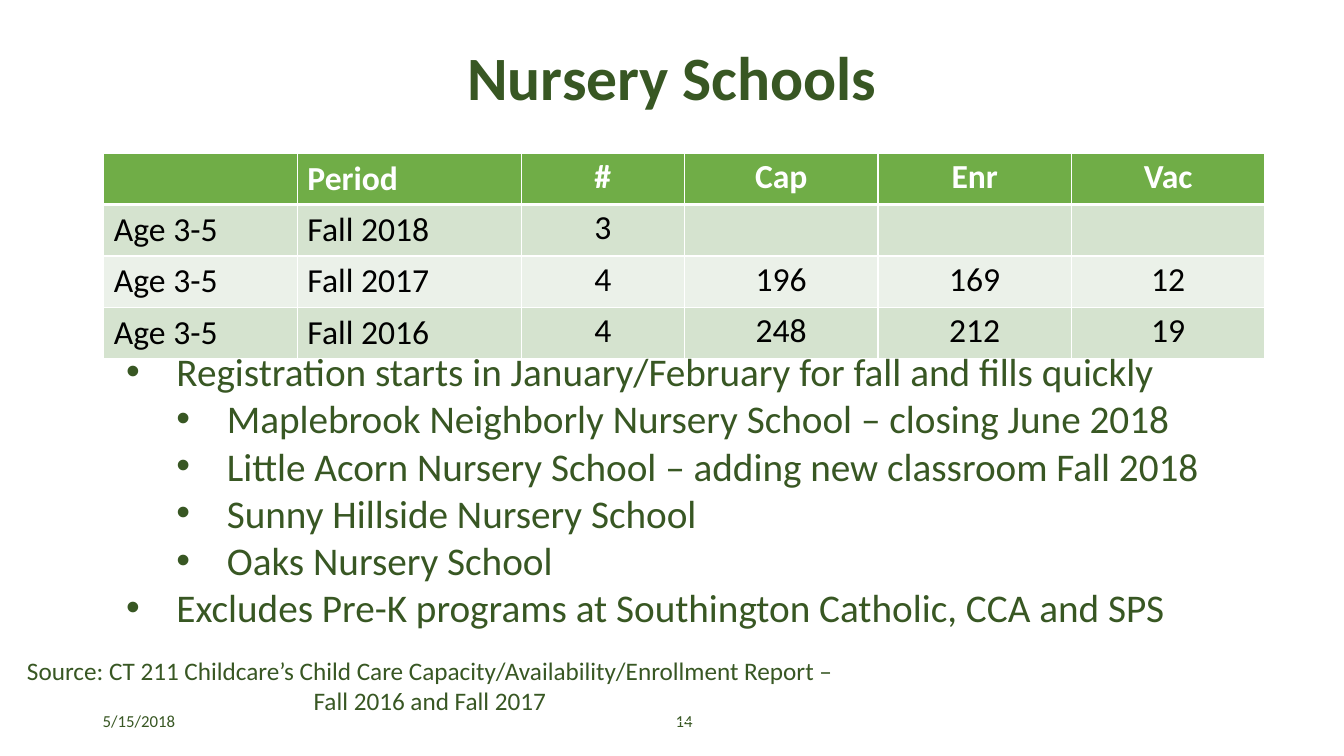
from dataclasses import dataclass

from lxml.etree import SubElement
from pptx import Presentation
from pptx.dml.color import RGBColor
from pptx.enum.text import MSO_ANCHOR, MSO_AUTO_SIZE, PP_ALIGN
from pptx.oxml.ns import qn
from pptx.util import Inches, Pt

SLIDE_WIDTH, SLIDE_HEIGHT = Inches(13.33), Inches(7.5)


@dataclass(frozen=True)
class Theme:
    font: str = "Calibri"
    green: str = "385723"
    header: str = "70AD47"
    bands: tuple = ("D5E3CF", "EBF1E9")
    white: str = "FFFFFF"
    black: str = "000000"
    title_size: int = 44
    list_size: int = 28
    table_size: int = 24
    source_size: int = 18
    footer_size: int = 12


THEME = Theme()

ENROLLMENT = [
    ("", "Period", "#", "Cap", "Enr", "Vac"),
    ("Age 3-5", "Fall 2018", "3", "", "", ""),
    ("Age 3-5", "Fall 2017", "4", "196", "169", "12"),
    ("Age 3-5", "Fall 2016", "4", "248", "212", "19"),
]
COLUMN_SHARES = (14.4, 16.65, 12.15, 14.4, 14.4, 14.4)
ROW_SHARE = 6.8

NOTES = [
    (0, "Registration starts in January/February for fall and fills quickly"),
    (1, "Maplebrook Neighborly Nursery School – closing June 2018"),
    (1, "Little Acorn Nursery School – adding new classroom Fall 2018"),
    (1, "Sunny Hillside Nursery School"),
    (1, "Oaks Nursery School"),
    (0, "Excludes Pre-K programs at Southington Catholic, CCA and SPS"),
]
SOURCE = ("Source: CT 211 Childcare’s Child Care Capacity/Availability/"
          "Enrollment Report – Fall 2016 and Fall 2017")


def across(percent):
    return int(SLIDE_WIDTH * percent / 100)


def down(percent):
    return int(SLIDE_HEIGHT * percent / 100)


def area(left, top, width, height):
    """Turn percentages of the slide into a position and a size."""
    return across(left), down(top), across(width), down(height)


def move(shape, box):
    shape.left, shape.top, shape.width, shape.height = box


def style(paragraph, size, color=THEME.green, bold=False, align=PP_ALIGN.LEFT):
    paragraph.alignment = align
    font = paragraph.font
    font.name, font.size, font.bold = THEME.font, Pt(size), bold
    font.color.rgb = RGBColor.from_string(color)
    for run in paragraph.runs:
        run.font.name, run.font.size, run.font.bold = THEME.font, Pt(size), bold
        run.font.color.rgb = RGBColor.from_string(color)


def add_title(slide, wording):
    title = slide.shapes.title
    move(title, area(6.9, 0.93, 86.25, 19.33))
    frame = title.text_frame
    frame.text = wording
    frame.vertical_anchor = MSO_ANCHOR.MIDDLE
    frame.paragraphs[0].line_spacing = 0.9
    style(frame.paragraphs[0], THEME.title_size, bold=True, align=PP_ALIGN.CENTER)


def add_border(cell, bottom_width):
    properties = cell._tc.get_or_add_tcPr()
    for side, width in (("L", 1), ("R", 1), ("T", 1), ("B", bottom_width)):
        line = SubElement(properties, qn(f"a:ln{side}"), w=str(Pt(width)))
        fill = SubElement(line, qn("a:solidFill"))
        SubElement(fill, qn("a:srgbClr"), val=THEME.white)


def center_cell(cell):
    """Centre a cell's text inside narrow margins."""
    cell.vertical_anchor = MSO_ANCHOR.MIDDLE
    cell.margin_left = cell.margin_right = cell.margin_top = Inches(0.01)
    cell.margin_bottom = Inches(0.05)


def add_enrollment_table(slide):
    box = area(7.73, 20.27, sum(COLUMN_SHARES), ROW_SHARE * len(ENROLLMENT))
    table = slide.shapes.add_table(len(ENROLLMENT), len(COLUMN_SHARES), *box).table
    for column, share in zip(table.columns, COLUMN_SHARES):
        column.width = across(share)
    for r, record in enumerate(ENROLLMENT):
        is_header = r == 0
        table.rows[r].height = down(ROW_SHARE)
        background = THEME.header if is_header else THEME.bands[(r - 1) % 2]
        for c, value in enumerate(record):
            cell = table.cell(r, c)
            cell.text = value
            if c >= 2:
                center_cell(cell)
            add_border(cell, 3 if is_header else 1)
            cell.fill.solid()
            cell.fill.fore_color.rgb = RGBColor.from_string(background)
            style(cell.text_frame.paragraphs[0], THEME.table_size,
                  THEME.white if is_header else THEME.black, is_header,
                  PP_ALIGN.CENTER if c >= 2 else PP_ALIGN.LEFT)


def add_bullet(paragraph, level):
    paragraph.level = level
    properties = paragraph._p.get_or_add_pPr()
    properties.set("marL", str(Inches(0.5 * (level + 1))))
    properties.set("indent", str(-Inches(0.5)))
    SubElement(properties, qn("a:buFont"), typeface="Arial")
    SubElement(properties, qn("a:buChar"), char="•")


def add_notes_list(slide):
    body = slide.placeholders[1]
    move(body, area(8.63, 45.33, 84.53, 39.07))
    slide.shapes._spTree.append(body._element)  # in front of the table
    frame = body.text_frame
    frame.auto_size = MSO_AUTO_SIZE.NONE
    frame.vertical_anchor = MSO_ANCHOR.TOP
    frame.text = "\n".join(wording for _, wording in NOTES)
    for paragraph, (level, _) in zip(frame.paragraphs, NOTES):
        paragraph.space_before = Pt(0)
        add_bullet(paragraph, level)
        style(paragraph, THEME.list_size)


def add_source(slide):
    box = area(1.35, 86.67, 61.28, 8.8)
    table = slide.shapes.add_table(1, 1, *box).table
    table.first_row = table.horz_banding = False
    cell = table.cell(0, 0)
    cell.text = SOURCE
    center_cell(cell)
    cell.fill.background()
    style(cell.text_frame.paragraphs[0], THEME.source_size, align=PP_ALIGN.CENTER)


def add_footer(slide, wording, left, width, align):
    frame = slide.shapes.add_textbox(*area(left, 92.67, width, 5.33)).text_frame
    frame.word_wrap = True
    frame.vertical_anchor = MSO_ANCHOR.MIDDLE
    frame.text = wording
    style(frame.paragraphs[0], THEME.footer_size, align=align)


def main():
    presentation = Presentation()
    presentation.slide_width, presentation.slide_height = SLIDE_WIDTH, SLIDE_HEIGHT
    slide = presentation.slides.add_slide(presentation.slide_layouts[1])
    add_title(slide, "Nursery Schools")
    add_enrollment_table(slide)
    add_notes_list(slide)
    add_footer(slide, "14", 47.7, 4.58, PP_ALIGN.RIGHT)
    add_source(slide)
    add_footer(slide, "5/15/2018", 6.9, 22.5, PP_ALIGN.LEFT)
    presentation.save("out.pptx")


if __name__ == "__main__":
    main()
